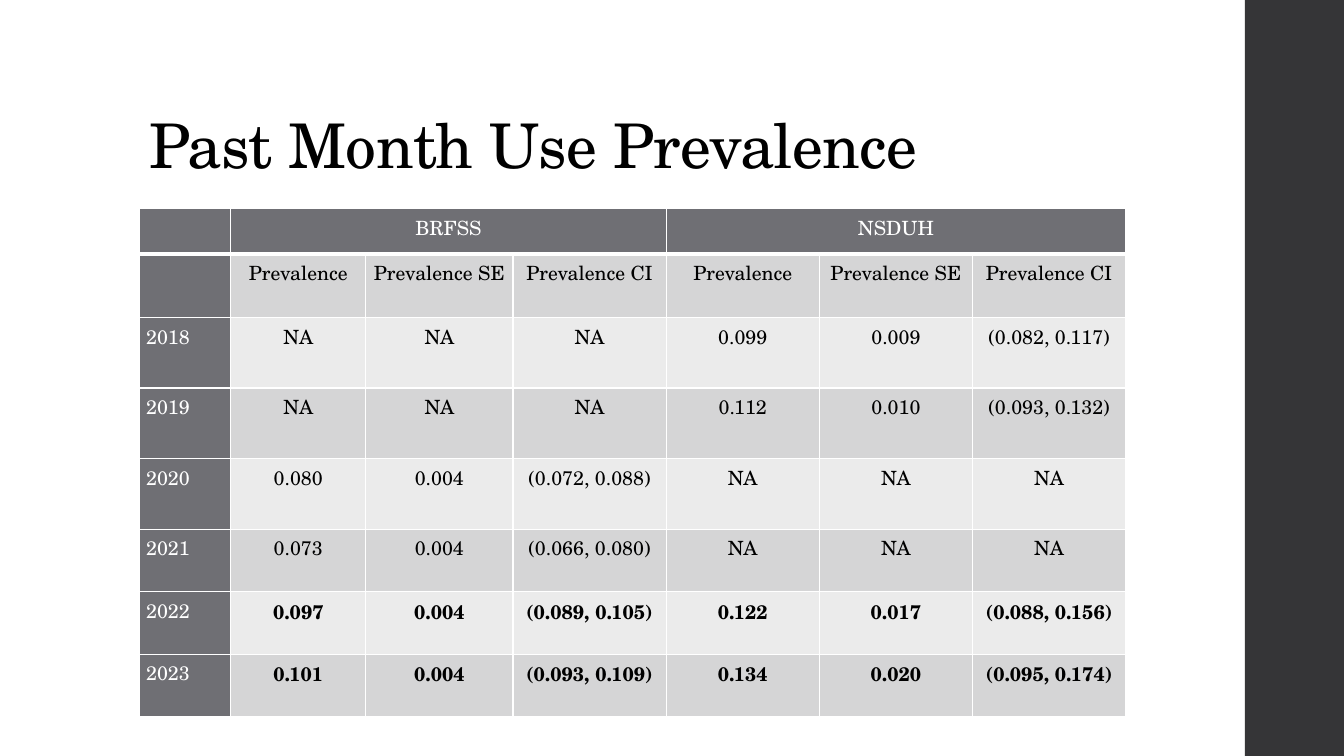
from lxml import etree
from pptx import Presentation, util as u
from pptx.dml.color import RGBColor
from pptx.enum import shapes, text
from pptx.oxml.ns import qn

FONT = "TeX Gyre Schola"
BLACK = RGBColor(0x00, 0x00, 0x00)
WHITE = RGBColor(0xFF, 0xFF, 0xFF)
CHARCOAL = RGBColor(0x35, 0x35, 0x37)
HEADER_GRAY = RGBColor(0x6F, 0x6F, 0x74)
BANDS = RGBColor(0xD5, 0xD5, 0xD6), RGBColor(0xEB, 0xEB, 0xEB)

SLIDE_WIDTH, SLIDE_HEIGHT = u.Inches(13.33), u.Inches(7.5)
GRID_COLUMNS, GRID_ROWS = 160, 90
SIDEBAR_BOX = 148.2, 0, 12, 90
TITLE_BOX = 16.56, 4.8, 127.2, 17.4
TABLE_BOX = 16.56, 24.84, 117.48, 60.48
COLUMN_WIDTHS = [10.92, 16.08, 17.52] + [18.24] * 4
ROW_HEIGHTS = [5.4, 7.56] + [8.4] * 3 + [7.44] * 3

SURVEYS = ["BRFSS", "NSDUH"]
MEASURES = ["Prevalence", "Prevalence SE", "Prevalence CI"]
MISSING = ["NA"] * 3
ESTIMATES = {
    "2018": MISSING + ["0.099", "0.009", "(0.082, 0.117)"],
    "2019": MISSING + ["0.112", "0.010", "(0.093, 0.132)"],
    "2020": ["0.080", "0.004", "(0.072, 0.088)"] + MISSING,
    "2021": ["0.073", "0.004", "(0.066, 0.080)"] + MISSING,
    "2022": ["0.097", "0.004", "(0.089, 0.105)", "0.122", "0.017", "(0.088, 0.156)"],
    "2023": ["0.101", "0.004", "(0.093, 0.109)", "0.134", "0.020", "(0.095, 0.174)"],
}
BOLD_YEARS = {"2022", "2023"}


def across(columns):
    """Return the length of a number of grid columns."""
    return u.Emu(round(SLIDE_WIDTH * columns / GRID_COLUMNS))


def down(rows):
    """Return the length of a number of grid rows."""
    return u.Emu(round(SLIDE_HEIGHT * rows / GRID_ROWS))


def place(box):
    """Turn a grid box into left, top, width and height."""
    left, top, width, height = box
    return across(left), down(top), across(width), down(height)


def write(frame, words, size=14, color=BLACK, bold=False, align=text.PP_ALIGN.CENTER,
          line_spacing=1.15, space_after=8, tracking=0):
    """Write one formatted paragraph into a text frame."""
    paragraph = frame.paragraphs[0]
    paragraph.alignment = align
    paragraph.line_spacing = line_spacing
    paragraph.space_after = u.Pt(space_after)
    run = paragraph.add_run()
    run.text = words
    run.font.name = FONT
    run.font.size = u.Pt(size)
    run.font.bold = bold
    run.font.color.rgb = color
    if tracking:
        run.font._element.set("spc", str(round(tracking * 100)))


def draw_sidebar(slide, box):
    """Draw the dark band along the right edge."""
    band = slide.shapes.add_shape(shapes.MSO_SHAPE.RECTANGLE, *place(box))
    band.shadow.inherit = False
    band.fill.solid()
    band.fill.fore_color.rgb = CHARCOAL
    band.line.fill.background()


def draw_title(slide, box):
    """Draw the title at the bottom of its box."""
    frame = slide.shapes.add_textbox(*place(box)).text_frame
    frame.word_wrap = True
    frame.vertical_anchor = text.MSO_ANCHOR.BOTTOM
    write(frame, "Past Month Use Prevalence", size=44, align=text.PP_ALIGN.LEFT,
          line_spacing=0.9, space_after=0, tracking=-0.5)


def style_cell(cell, fill, top=1, bottom=1):
    """Give a cell its white borders, fill and margins."""
    properties = cell._tc.get_or_add_tcPr()
    for side, points in zip("LRTB", (1, 1, top, bottom)):
        line = etree.SubElement(properties, qn(f"a:ln{side}"), w=str(u.Pt(points)))
        line_fill = etree.SubElement(line, qn("a:solidFill"))
        etree.SubElement(line_fill, qn("a:srgbClr"), val=str(WHITE))
    cell.fill.solid()
    cell.fill.fore_color.rgb = fill
    cell.margin_left = cell.margin_right = u.Inches(0.07)
    cell.margin_top = cell.margin_bottom = 0


def draw_table(slide, box):
    """Draw the prevalence table with a merged header for each survey."""
    survey_row = [""]
    for survey in SURVEYS:
        survey_row += [survey, "", ""]
    rows = [survey_row, [""] + MEASURES * len(SURVEYS)]
    rows += [[year] + values for year, values in ESTIMATES.items()]
    table = slide.shapes.add_table(len(rows), len(COLUMN_WIDTHS), *place(box)).table
    for column, width in zip(table.columns, COLUMN_WIDTHS):
        column.width = across(width)
    for row, height in zip(table.rows, ROW_HEIGHTS):
        row.height = down(height)
    for i, values in enumerate(rows):
        for j, value in enumerate(values):
            cell = table.cell(i, j)
            is_header = i == 0 or j == 0
            style_cell(cell, HEADER_GRAY if is_header else BANDS[(i - 1) % 2],
                       top=3 if i == 1 else 1, bottom=3 if i == 0 else 1)
            if value:
                write(cell.text_frame, value, color=WHITE if is_header else BLACK,
                      bold=j > 0 and values[0] in BOLD_YEARS,
                      align=text.PP_ALIGN.CENTER if j else text.PP_ALIGN.LEFT)
    for k in range(len(SURVEYS)):
        first = 1 + k * len(MEASURES)
        table.cell(0, first).merge(table.cell(0, first + len(MEASURES) - 1))


def main():
    """Build and save the presentation."""
    presentation = Presentation()
    presentation.slide_width, presentation.slide_height = SLIDE_WIDTH, SLIDE_HEIGHT
    slide = presentation.slides.add_slide(presentation.slide_layouts[6])
    draw_sidebar(slide, SIDEBAR_BOX)
    draw_title(slide, TITLE_BOX)
    draw_table(slide, TABLE_BOX)
    presentation.save("out.pptx")


if __name__ == "__main__":
    main()
